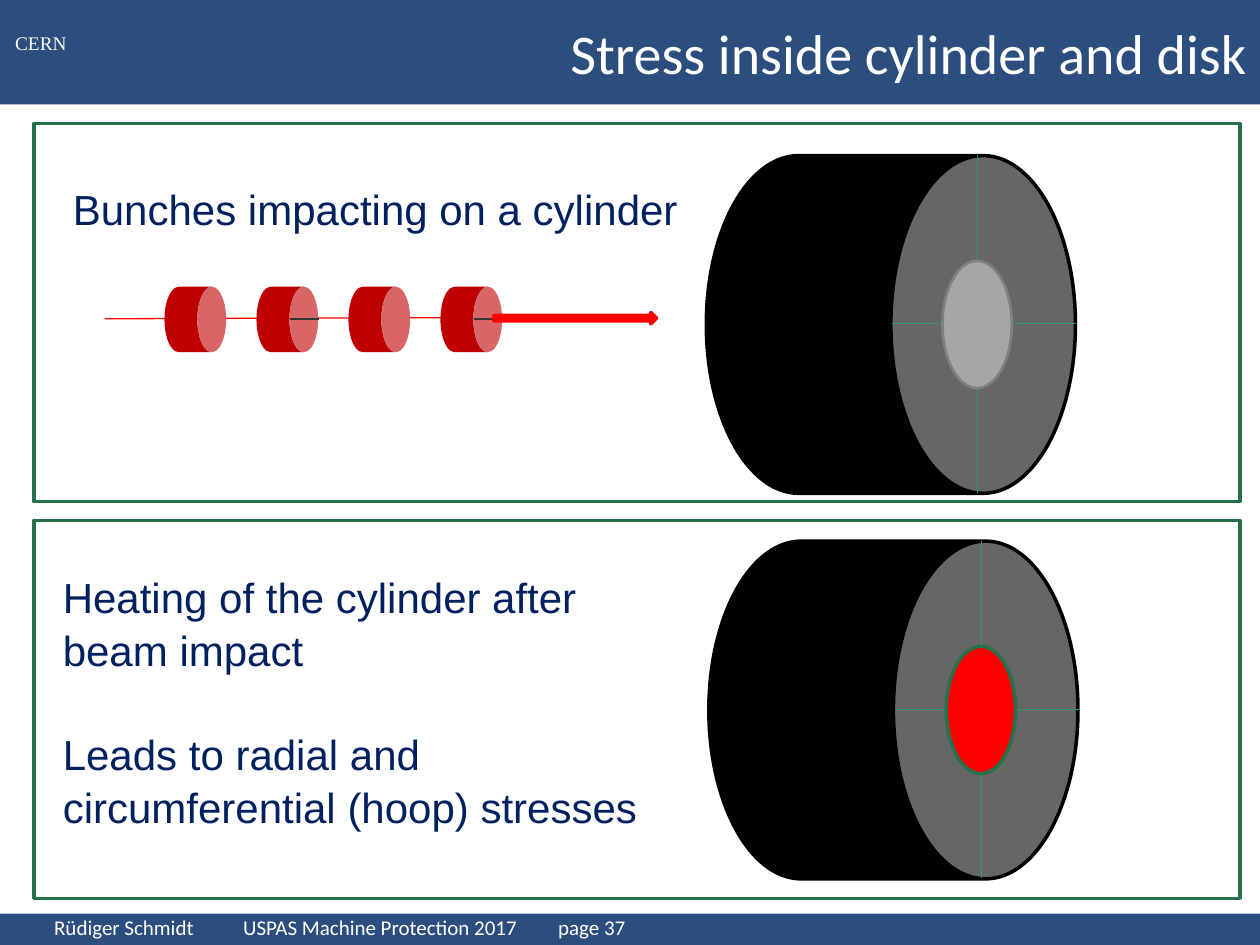
"""Build a slide on the stress that bunches cause in a cylinder."""
from dataclasses import dataclass
from lxml.etree import SubElement
from pptx import Presentation
from pptx.dml.color import RGBColor
from pptx.enum.shapes import MSO_CONNECTOR, MSO_SHAPE
from pptx.enum.text import MSO_ANCHOR, PP_ALIGN
from pptx.oxml.ns import qn
from pptx.util import Inches, Pt

BAND = RGBColor(0x2B, 0x4E, 0x7E)
WHITE = RGBColor(0xFF, 0xFF, 0xFF)
BLACK = RGBColor(0, 0, 0)
RED = RGBColor(0xFF, 0, 0)
BUNCH = RGBColor(0xBF, 0, 0)
DARK = RGBColor(0x36, 0x36, 0x36)
GREEN = RGBColor(0x26, 0x71, 0x4B)
CROSS = RGBColor(0x2F, 0x98, 0x64)
SILVER = RGBColor(0xA6, 0xA6, 0xA6)
GRAY = RGBColor(0x80, 0x80, 0x80)
NAVY = RGBColor(0, 0x20, 0x60)


@dataclass
class Box:
    left: float
    top: float
    width: float
    height: float

    def place(self) -> tuple:
        return tuple(map(Inches, (self.left, self.top, self.width, self.height)))


@dataclass
class Target:
    left: float
    top: float
    mid: float
    core: RGBColor
    edge: RGBColor
    weight: float


def apply(item, values: dict) -> None:
    for name, value in values.items():
        setattr(item, name, value)


def add_shape(slide, kind, box: Box, fill=None, edge=None, weight=2.0):
    shape = slide.shapes.add_shape(kind, *box.place())
    shape.shadow.inherit = False
    if fill is None:
        shape.fill.background()
    else:
        shape.fill.solid()
        shape.fill.fore_color.rgb = fill
    if edge is None:
        shape.line.fill.background()
    else:
        shape.line.color.rgb = edge
        shape.line.width = Pt(weight)
    return shape


def add_can(slide, box: Box, depth: float, fill, edge=None) -> None:
    can = add_shape(slide, MSO_SHAPE.CAN, box, fill, edge)
    can.rotation = 90
    can.adjustments[0] = depth


def add_line(slide, start: tuple, end: tuple, color, weight=0.75) -> None:
    line = slide.shapes.add_connector(
        MSO_CONNECTOR.STRAIGHT, *map(Inches, start + end))
    line.line.color.rgb = color
    line.line.width = Pt(weight)
    SubElement(line._element.spPr, qn("a:effectLst"))


def fill_text(shape, lines: list, font: dict, frame: dict, para: dict, gap=0) -> None:
    apply(shape.text_frame, frame)
    shape.text_frame.text = "\n".join(lines)
    for i, item in enumerate(shape.text_frame.paragraphs):
        apply(item, para)
        if i:
            item.space_before = Pt(gap)
        font_part = {k: v for k, v in font.items() if k != "color"}
        apply(item.font, font_part)
        item.font.color.rgb = font["color"]


def add_text(slide, box: Box, lines: list, font: dict, frame: dict, para: dict, gap=0):
    shape = slide.shapes.add_textbox(*box.place())
    fill_text(shape, lines, font, frame, para, gap)
    return shape


def add_target(slide, part: Target) -> None:
    add_can(slide, Box(part.left, part.top, 2.68, 2.93), 0.588, BLACK, BLACK)
    level = part.top + 1.46
    add_line(slide, (part.mid - 0.68, level), (part.mid + 0.78, level), CROSS)
    add_line(slide, (part.mid, level - 1.34), (part.mid, level + 1.34), CROSS)
    add_shape(slide, MSO_SHAPE.OVAL, Box(part.mid - 0.28, level - 0.5, 0.55, 1.01),
              part.core, part.edge, part.weight)


def add_beam(slide) -> None:
    add_line(slide, (3.92, 2.52), (0.83, 2.53), RED)
    for i in range(4):
        left = 1.29 + 0.73 * i
        add_can(slide, Box(left, 2.29, 0.52, 0.49), 0.466, BUNCH)
        if i % 2:
            add_line(slide, (left + 0.51, 2.53), (left + 0.28, 2.53), DARK, 1)
    add_shape(slide, MSO_SHAPE.RIGHT_ARROW, Box(3.92, 2.48, 1.29, 0.09), RED, RED)


def add_bands(slide) -> None:
    for box in (Box(0, 0, 10, 0.83), Box(0, 7.25, 10, 0.25)):
        add_shape(slide, MSO_SHAPE.RECTANGLE, box, BAND)
    add_text(slide, Box(-0.01, 0.2, 0.67, 0.29), ["CERN"],
             {"name": "Times New Roman", "size": Pt(11), "color": WHITE},
             {"word_wrap": True}, {"alignment": PP_ALIGN.CENTER})
    foot = slide.shapes.add_textbox(*Box(0, 7.25, 9.83, 0.26).place())
    item = foot.text_frame.paragraphs[0]
    tabs = SubElement(item._p.get_or_add_pPr(), qn("a:tabLst"))
    for stop in (1.86, 8.67):
        SubElement(tabs, qn("a:tab"), pos=str(Inches(stop)), algn="l")
    fill_text(foot, ["Rüdiger Schmidt\tUSPAS Machine Protection 2017\tpage 37"],
              {"name": "Calibri", "size": Pt(12), "color": WHITE},
              {"word_wrap": True, "margin_left": Inches(0.43),
               "vertical_anchor": MSO_ANCHOR.BOTTOM}, {})


def add_title(slide) -> None:
    title = slide.shapes.title
    slide.shapes._spTree.append(title._element)
    box = Box(0.83, 0, 9.17, 0.83).place()
    apply(title, dict(zip(("left", "top", "width", "height"), box)))
    fill_text(title, ["Stress inside cylinder and disk"],
              {"name": "Calibri", "size": Pt(32), "color": WHITE},
              {"word_wrap": True, "vertical_anchor": MSO_ANCHOR.MIDDLE},
              {"alignment": PP_ALIGN.RIGHT})


def main() -> None:
    deck = Presentation()
    apply(deck, {"slide_width": Inches(10), "slide_height": Inches(7.5)})
    slide = deck.slides.add_slide(deck.slide_layouts[5])
    add_bands(slide)
    add_title(slide)
    add_beam(slide)
    for part in (Target(5.73, 1.11, 7.76, SILVER, GRAY, 1.5),
                 Target(5.75, 4.17, 7.79, RED, GREEN, 2)):
        add_target(slide, part)
    for top in (0.98, 4.13):
        add_shape(slide, MSO_SHAPE.RECTANGLE, Box(0.27, top, 9.57, 3), None, GREEN)
    font = {"name": "Arial", "size": Pt(24), "color": NAVY}
    para = {"line_spacing": 1.05}
    add_text(slide, Box(0.48, 1.39, 5.05, 0.5), ["Bunches impacting on a cylinder"],
             font, {"word_wrap": False}, para)
    add_text(slide, Box(0.4, 4.47, 4.95, 2.12),
             ["Heating of the cylinder after beam impact",
              "Leads to radial and circumferential (hoop) stresses"],
             font, {"word_wrap": True}, para, 29)
    deck.save("out.pptx")


if __name__ == "__main__":
    main()
